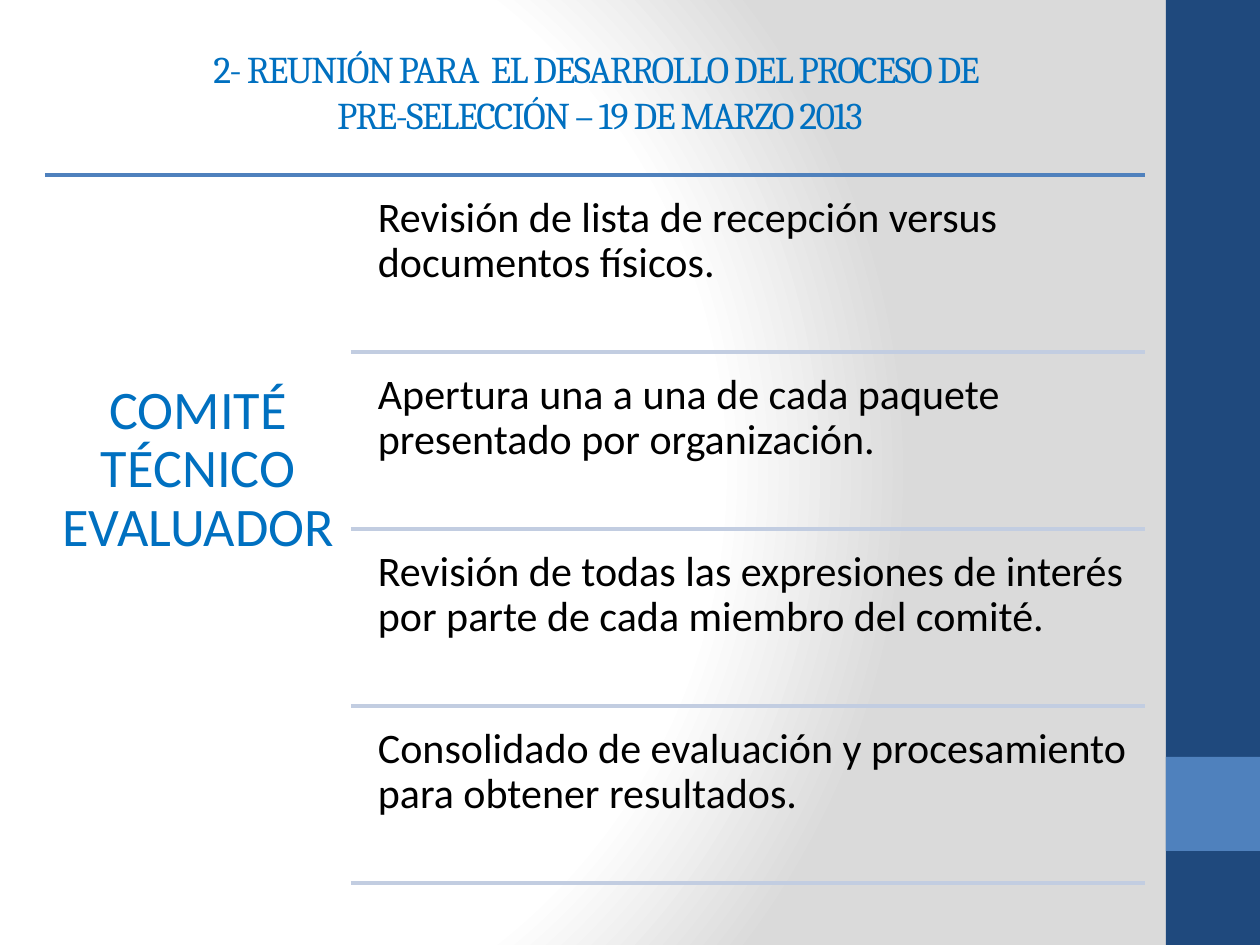
from lxml import etree
from pptx import Presentation
from pptx.dml.color import RGBColor
from pptx.enum.shapes import MSO_CONNECTOR as CONN, MSO_SHAPE as SHAPE
from pptx.enum.text import MSO_ANCHOR as ANCHOR, PP_ALIGN as ALIGN
from pptx.oxml.ns import qn
from pptx.util import Emu, Pt

SCALE = 914400 / 126
WIDTH, HEIGHT = 1260, 945
TITLE = ["2- REUNIÓN PARA  EL DESARROLLO DEL PROCESO DE ",
         "PRE-SELECCIÓN – 19 DE MARZO 2013"]
COMMITTEE = "COMITÉ TÉCNICO EVALUADOR"
STEPS = [
    "Revisión de lista de recepción versus documentos físicos.",
    "Apertura una a una de cada paquete presentado por organización.",
    "Revisión de todas las expresiones de interés por parte de cada miembro del comité.",
    "Consolidado de evaluación y procesamiento para obtener resultados.",
]


def px(n):
    return Emu(round(n * SCALE))


def rgb(color):
    return RGBColor.from_string(color)


def set_attrs(obj, values):
    for name, value in values.items():
        setattr(obj, name, value)


def add_rect(s, box, color):
    sp = s.shapes.add_shape(SHAPE.RECTANGLE, *map(px, box))
    sp.shadow.inherit = False
    sp.fill.solid()
    sp.fill.fore_color.rgb = rgb(color)
    sp.line.fill.background()


def add_rule(s, x1, x2, y, color):
    """Draw a horizontal rule from x1 to x2."""
    line = s.shapes.add_connector(CONN.STRAIGHT, px(x1), px(y), px(x2), px(y))
    line.line.color.rgb = rgb(color)
    line.line.width = Pt(2)
    etree.SubElement(line._element.spPr, qn("a:effectLst"))


def add_text(s, box, lines, color, font, frame, para):
    """Add one paragraph, with a line break between lines; return its runs."""
    tf = s.shapes.add_textbox(*map(px, box)).text_frame
    set_attrs(tf, {"word_wrap": True, **frame})
    p = tf.paragraphs[0]
    set_attrs(p, para)
    for i, text in enumerate(lines):
        if i:
            p.add_line_break()
        r = p.add_run()
        r.text = text
        set_attrs(r.font, font)
        r.font.color.rgb = rgb(color)
    return p.runs


def insets(n):
    sides = ("left", "top", "right", "bottom")
    return {f"margin_{side}": px(n) for side in sides}


def add_background(s):
    """Fill the background with a circular gradient, white to grey."""
    fill = s.background.fill
    fill.gradient()
    grad = s.background._cSld.find(".//" + qn("a:gradFill"))
    for child in list(grad):
        grad.remove(child)
    stops = etree.SubElement(grad, qn("a:gsLst"))
    for pos, color in ((0, "FFFFFF"), (75, "FFFFFF"), (100, "DADADA")):
        stop = etree.SubElement(stops, qn("a:gs"), pos=str(pos * 1000))
        etree.SubElement(stop, qn("a:srgbClr"), val=color)
    circle = etree.SubElement(grad, qn("a:path"), path="circle")
    etree.SubElement(circle, qn("a:fillToRect"),
                     l="20000", t="50000", r="100000", b="50000")


def add_sidebar(s, x, y, w, h):
    add_rect(s, (x, y, w, h), "1F497D")
    add_rect(s, (x, y + h - 2 * w, w, w), "4F81BD")


def add_title(s, x, y, w, h):
    runs = add_text(s, (x, y, w, h), TITLE, "0070C0",
                    {"name": "Cambria", "size": Pt(21.6)},
                    {"vertical_anchor": ANCHOR.MIDDLE},
                    {"alignment": ALIGN.CENTER})
    for r in runs:
        r.font._element.set("spc", "-100")


def add_committee(s, x, y, w, h):
    """Place the committee's name at the left and its ruled steps at the right."""
    label_w, indent, gap = 306, 14, 8
    add_rule(s, x, x + w, y, "4F81BD")
    add_text(s, (x, y, label_w, h), [COMMITTEE], "0070C0",
             {"name": "Calibri", "size": Pt(31)},
             {**insets(16), "margin_top": px(255)},
             {"alignment": ALIGN.CENTER, "line_spacing": 0.9})
    left, right, pitch = x + label_w, x + w, 177
    for i, step in enumerate(STEPS):
        top = y + i * pitch
        box = (left + indent, top + gap, right - left - indent, pitch - gap)
        add_text(s, box, [step], "000000",
                 {"name": "Calibri", "size": Pt(24)},
                 insets(13), {"line_spacing": 0.9})
        add_rule(s, left, right, top + pitch, "C2CDE1")


def main():
    prs = Presentation()
    set_attrs(prs, {"slide_width": px(WIDTH), "slide_height": px(HEIGHT)})
    s = prs.slides.add_slide(prs.slide_layouts[6])
    add_background(s)
    add_sidebar(s, 1166, 0, 94, HEIGHT)
    add_title(s, 33, 38, 1134, 107)
    add_committee(s, 45, 175, 1100, 717)
    prs.save("out.pptx")


if __name__ == "__main__":
    main()
